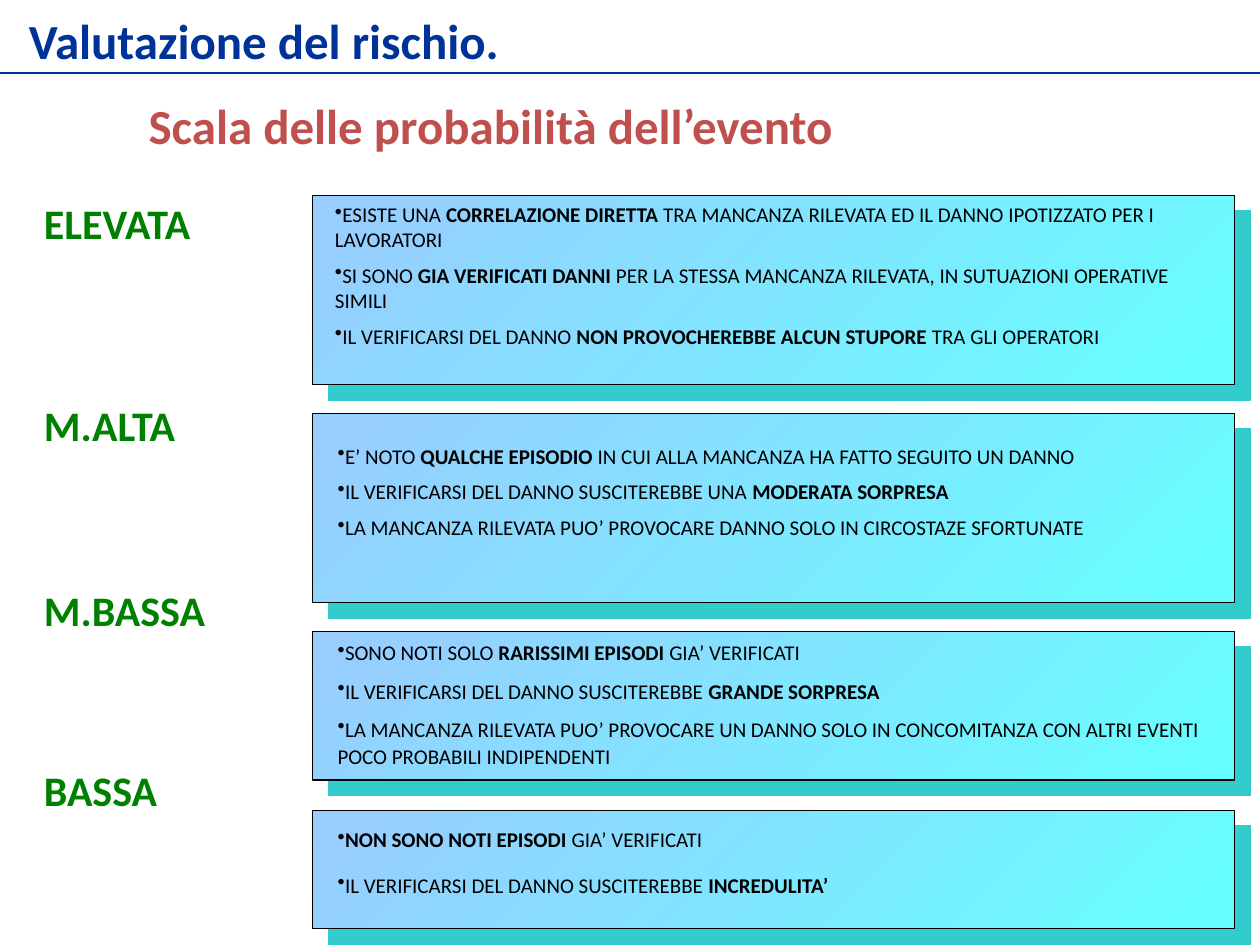
from lxml.etree import SubElement
from pptx import Presentation
from pptx.dml.color import RGBColor
from pptx.enum.shapes import MSO_CONNECTOR, MSO_SHAPE
from pptx.oxml.ns import qn
from pptx.util import Pt

COLORS = {
    "title": "003399", "subtitle": "C0504D", "label": "008000", "text": "000000",
    "panel_start": "99CCFF", "panel_end": "66FFFF", "shadow": "33CCCC",
}


def color(name):
    return RGBColor.from_string(COLORS[name])


def add_text(page, place, lines, size, color_name, bold=None, wrap=True):
    """Add a text box; parts between asterisks are bold."""
    box = page.shapes.add_textbox(*map(Pt, place))
    frame = box.text_frame
    frame.word_wrap = wrap
    for index, line in enumerate(lines):
        para = frame.paragraphs[0] if index == 0 else frame.add_paragraph()
        font = para.font
        font.name, font.size, font.bold = "Calibri", Pt(size), bold
        font.color.rgb = color(color_name)
        for part, words in enumerate(line.split("*")):
            if words:
                span = para.add_run()
                span.text = words
                if part % 2:
                    span.font.bold = True
    return frame.paragraphs


deck = Presentation()
deck.slide_width, deck.slide_height = Pt(720), Pt(540)
page = deck.slides.add_slide(deck.slide_layouts[6])

# Each level: panel top and height, text place, line spacing, statements
levels = [
    (111.6, 108, (184.3, 111.6, 514, 108), 1, [
        "ESISTE UNA *CORRELAZIONE DIRETTA* TRA MANCANZA RILEVATA ED IL DANNO IPOTIZZATO PER I LAVORATORI",
        "SI SONO *GIA VERIFICATI DANNI* PER LA STESSA MANCANZA RILEVATA, IN SUTUAZIONI OPERATIVE SIMILI",
        "IL VERIFICARSI DEL DANNO *NON PROVOCHEREBBE ALCUN STUPORE* TRA GLI OPERATORI",
    ]),
    (236.2, 108, (185.8, 249.8, 514, 93.6), 1, [
        "E’ NOTO *QUALCHE EPISODIO* IN CUI ALLA MANCANZA HA FATTO SEGUITO UN DANNO",
        "IL VERIFICARSI DEL DANNO SUSCITEREBBE UNA *MODERATA SORPRESA*",
        "LA MANCANZA RILEVATA PUO’ PROVOCARE DANNO SOLO IN CIRCOSTAZE SFORTUNATE",
    ]),
    (360.7, 85, (185.8, 360.7, 514, 85), 1.1, [
        "SONO NOTI SOLO *RARISSIMI EPISODI* GIA’ VERIFICATI",
        "IL VERIFICARSI DEL DANNO SUSCITEREBBE *GRANDE SORPRESA*",
        "LA MANCANZA RILEVATA PUO’ PROVOCARE UN DANNO SOLO IN CONCOMITANZA CON ALTRI EVENTI POCO PROBABILI INDIPENDENTI",
    ]),
    (463, 67.7, (185.8, 463, 486, 54.7), 1.4, [
        "*NON SONO NOTI EPISODI* GIA’ VERIFICATI",
        "IL VERIFICARSI DEL DANNO SUSCITEREBBE *INCREDULITA’*",
    ]),
]

# Gradient panels with a hard offset shadow, lowest one at the back
for top, height, *_ in reversed(levels):
    panel = page.shapes.add_shape(MSO_SHAPE.RECTANGLE, Pt(178.6), Pt(top), Pt(527), Pt(height))
    panel.fill.gradient()
    panel.fill.gradient_angle = 315
    for stop, name in zip(panel.fill.gradient_stops, ("panel_start", "panel_end")):
        stop.color.rgb = color(name)
    panel.line.color.rgb = color("text")
    panel.line.width = Pt(0.75)
    panel.shadow.inherit = False
    effects = panel._element.spPr.find(qn("a:effectLst"))
    shadow = SubElement(effects, qn("a:outerShdw"), dist=str(Pt(12.7)), dir="2700000",
                        algn="ctr", rotWithShape="0")
    SubElement(shadow, qn("a:srgbClr"), val=COLORS["shadow"])

# Subtitle
add_text(page, (77.8, 51.1, 522, 41), ["Scala delle probabilità dell’evento"], 28, "subtitle", True)

# Level names, spaced to sit beside their panels
names = add_text(page, (18, 109.4, 174.2, 418.3), ["ELEVATA", "M.ALTA", "M.BASSA", "BASSA"],
                 24, "label", True)
for para, gap in zip(names[1:], (86.7, 77, 73.6)):
    para.space_before = Pt(gap)

# Bulleted statements
for _, _, place, spacing, statements in levels:
    for para in add_text(page, place, statements, 12, "text"):
        para.line_spacing = spacing
        para.space_before = Pt(6)
        SubElement(para._p.get_or_add_pPr(), qn("a:buChar"), char="•")
        # Bullets come before the default run properties in the schema
        properties = para._p.pPr
        properties.append(properties.find(qn("a:defRPr")))

# Title and rule
add_text(page, (9.4, 2.2, 296, 41), ["Valutazione del rischio."], 28, "title", True, wrap=False)
rule = page.shapes.add_connector(MSO_CONNECTOR.STRAIGHT, Pt(0), Pt(41.8), Pt(720), Pt(41.8))
rule.line.color.rgb = color("title")
rule.line.width = Pt(1)
SubElement(rule._element.spPr, qn("a:effectLst"))

deck.save("out.pptx")
